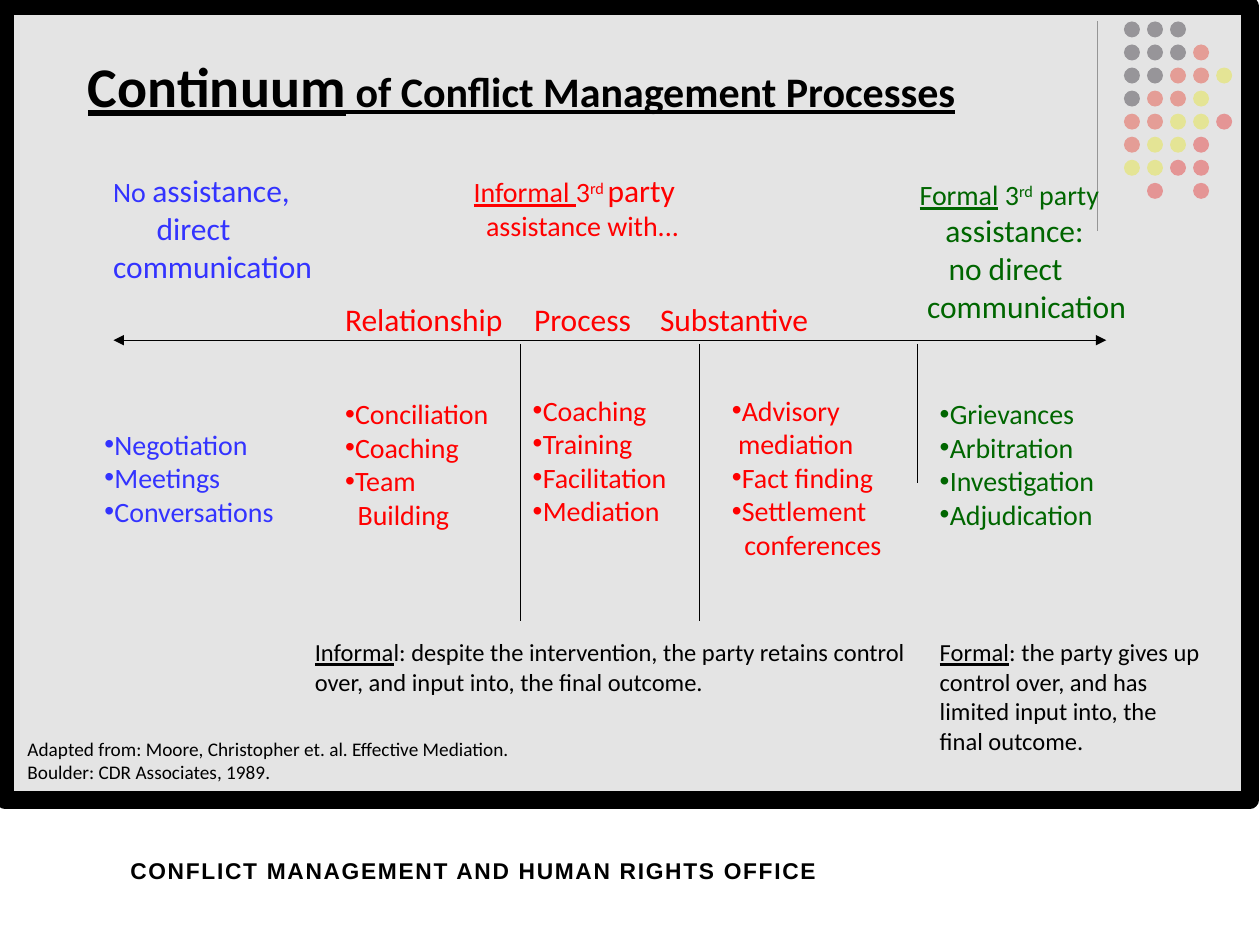
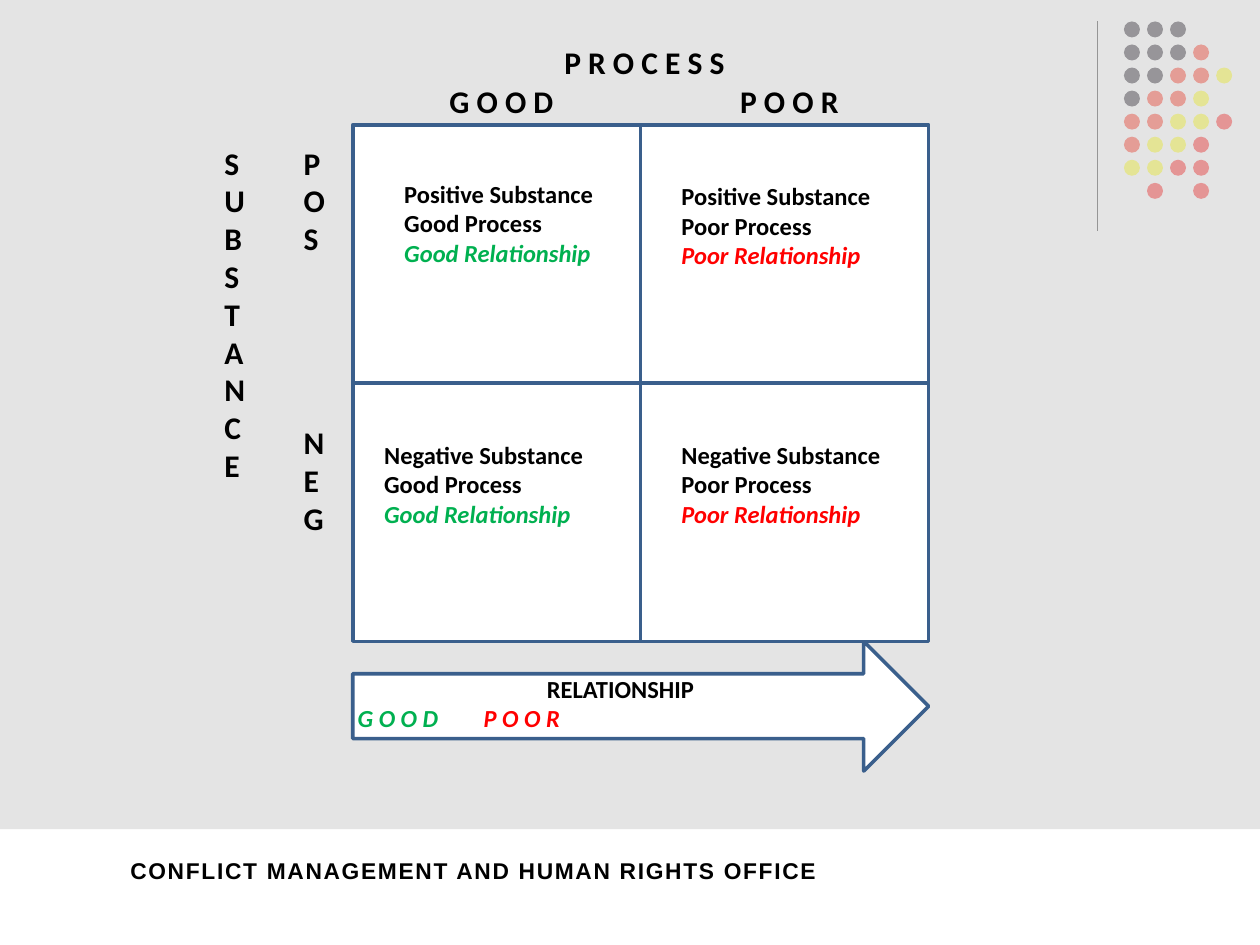
from dataclasses import dataclass

from lxml.etree import SubElement
from pptx import Presentation
from pptx.dml.color import RGBColor
from pptx.enum.shapes import MSO_CONNECTOR, MSO_SHAPE
from pptx.enum.text import PP_ALIGN
from pptx.oxml.ns import qn
from pptx.util import Inches, Pt

CELL = 0.1  # the slide is a grid of 100 columns by 75 rows
BLACK, WHITE, GREY = "000000", "FFFFFF", "D9D9D9"
BLUE, RED, GREEN = "3333FF", "FF0000", "006600"
LEAF, NAVY = "00B050", "3A5F8C"
DOTS = ["KKK", "KKKO", "KKOOY", "KOOY", "OOYYR", "OYYR", "YYRR", " R R"]
INKS = {"K": "06000C", "O": "FE1A02", "Y": "FFFF00", "R": RED}
FOOT = "CONFLICT MANAGEMENT AND HUMAN RIGHTS OFFICE"


def hue(code):
    return RGBColor.from_string(code)


def cells(*counts):
    return [Inches(n * CELL) for n in counts]


def put(par, text, size=16, color=BLACK, font="Calibri", bold=False,
        italic=False, under=False, raised=False, space=0):
    """Add one run of text to a paragraph."""
    run = par.add_run()
    run.text = text
    face = run.font
    face.name, face.size, face.color.rgb = font, Pt(size), hue(color)
    face.bold, face.italic, face.underline = bold, italic, under
    mark = run._r.get_or_add_rPr()
    if raised:
        mark.set("baseline", "30000")
    if space:
        mark.set("spc", str(space * 100))


@dataclass
class Par:
    """A paragraph: a string, or a list of strings and (string, format) pairs."""
    runs: object
    lead: float = 0
    dot: bool = False
    tabs: tuple = ()
    mid: bool = False


class Deck:
    def __init__(self):
        self.show = Presentation()
        self.show.slide_width, self.show.slide_height = cells(100, 75)

    def page(self, panel, edge=None):
        """Start a slide with the dots, the grey panel and the footer."""
        self.slide = self.show.slides.add_slide(self.show.slide_layouts[6])
        self.line(87.1, 1.7, 87.1, 18.3)
        for row, inks in enumerate(DOTS):
            for col, ink in enumerate(inks):
                if ink in INKS:
                    at = (89.2 + col * 1.83, 1.7 + row * 1.83, 1.27, 1.27)
                    self.shape(at, INKS[ink], kind=MSO_SHAPE.OVAL)
        self.shape(panel, GREY, edge, 10, alpha=69)
        self.text((7.5, 67.5, 60.1, 4), [Par(FOOT, mid=True)], size=13,
                  font="Arial", bold=True, space=1)

    def shape(self, at, fill, edge=None, width=2, kind=MSO_SHAPE.RECTANGLE, alpha=None):
        form = self.slide.shapes.add_shape(kind, *cells(*at))
        form.shadow.inherit = False
        form.fill.solid()
        form.fill.fore_color.rgb = hue(fill)
        props = form._element.spPr
        if alpha:
            tint = props.find(qn("a:solidFill"))[0]
            SubElement(tint, qn("a:alpha")).set("val", str(alpha * 1000))
        if edge:
            form.line.color.rgb = hue(edge)
            form.line.width = Pt(width)
            SubElement(props.find(qn("a:ln")), qn("a:round"))
        else:
            form.line.fill.background()

    def line(self, x1, y1, x2, y2, heads=False):
        link = self.slide.shapes.add_connector(MSO_CONNECTOR.STRAIGHT, *cells(x1, y1, x2, y2))
        link.line.color.rgb = hue(BLACK)
        link.line.width = Pt(0.75)
        props = link._element.spPr
        if heads:
            for end in ("a:headEnd", "a:tailEnd"):
                SubElement(props.find(qn("a:ln")), qn(end)).set("type", "triangle")
        SubElement(props, qn("a:effectLst"))

    def text(self, at, pars, stack=False, **style):
        frame = self.slide.shapes.add_textbox(*cells(*at)).text_frame
        frame.word_wrap = True
        if stack:
            frame._txBody.bodyPr.set("vert", "wordArtVert")
            frame.margin_left, frame.margin_top = cells(1.2, 0.8)
        for i, item in enumerate(pars):
            item = item if isinstance(item, Par) else Par(item)
            par = frame.add_paragraph() if i else frame.paragraphs[0]
            self.layout(par, item)
            for run in [item.runs] if isinstance(item.runs, str) else item.runs:
                words, extra = (run, {}) if isinstance(run, str) else run
                put(par, words, **{**style, **extra})

    def layout(self, par, item):
        """Set alignment, indent, bullet and tab stops."""
        par.alignment = PP_ALIGN.CENTER if item.mid else PP_ALIGN.LEFT
        props = par._p.get_or_add_pPr()
        hang = 0.8 if item.dot else 0
        props.set("marL", str(cells(item.lead + hang)[0]))
        props.set("indent", str(cells(-hang)[0]))
        if item.dot:
            SubElement(props, qn("a:buFont")).set("typeface", "Arial")
            SubElement(props, qn("a:buChar")).set("char", "•")
        if item.tabs:
            stops = SubElement(props, qn("a:tabLst"))
            for stop in item.tabs:
                tab = SubElement(stops, qn("a:tab"))
                tab.set("pos", str(cells(stop)[0]))
                tab.set("algn", "l")

    def bullets(self, x, y, width, items, color):
        """List items; a Par among them continues the item above it."""
        pars = [i if isinstance(i, Par) else Par(i, dot=True) for i in items]
        self.text((x, y, width, 2.7 * len(pars) + 1), pars, color=color)


def continuum(deck):
    deck.page((0.4, 0.5, 98.8, 63), BLACK)
    under, high, big = {"under": True}, {"raised": True}, {"size": 18}

    # Title
    deck.text((6, 3.6, 73, 6.4),
              [[("Continuum", {"size": 32}), " of Conflict Management Processes"]],
              size=24, bold=True, under=True)

    # Degrees of assistance, above the arrow
    deck.line(9, 27, 87.8, 27, heads=True)
    deck.text((8, 13.1, 18.5, 10.1),
              [[("No ", {"size": 16}), "assistance,"], Par("direct", lead=3.45),
               "communication"], color=BLUE, size=18)
    deck.text((36.6, 13.1, 19.5, 6.7),
              [[("Informal ", under), "3", ("rd ", high), ("party", big)],
               Par("assistance with...", lead=1)], color=RED)
    deck.text((72, 13.6, 19, 12.8),
              [[("Formal", under), " 3", ("rd", high), " party"],
               Par([("assistance:", big)], lead=2.05),
               Par([("no direct", big)], lead=2.3),
               Par([("communication", big)], lead=0.6)], color=GREEN)
    deck.text((26.4, 23.3, 46, 4),
              [Par("Relationship\tProcess\tSubstantive", tabs=(16.4, 30.5))],
              color=RED, size=18)

    # Methods, below the arrow
    deck.bullets(7.3, 33.4, 16.5, ["Negotiation", "Meetings", "Conversations"], BLUE)
    deck.bullets(26.4, 31, 14.3,
                 ["Conciliation", "Coaching", "Team", Par("Building", lead=1)], RED)
    deck.bullets(41.3, 30.7, 13.6,
                 ["Coaching", "Training", "Facilitation", "Mediation"], RED)
    deck.bullets(57.1, 30.7, 14.6,
                 ["Advisory", Par("mediation", lead=0.5), "Fact finding", "Settlement",
                  Par("conferences", lead=1)], RED)
    deck.bullets(73.6, 31, 15.3,
                 ["Grievances", "Arbitration", "Investigation", "Adjudication"], GREEN)
    for x, foot in ((41.3, 49.3), (55.5, 49.3), (72.8, 38.3)):
        deck.line(x, 27.3, x, foot)

    # Notes and reference
    deck.text((24, 50.1, 49.6, 5.7),
              [[("Informa", under), "l: despite the intervention, the party retains "
                "control over, and input into, the final outcome."]], size=14)
    deck.text((73.6, 50.1, 22.8, 10.4),
              [[("Formal", under), ": the party gives up control over, and has "
                "limited input into, the final outcome."]], size=14)
    deck.text((1.2, 58, 66.4, 6.7),
              ["Adapted from: Moore, Christopher et. al. Effective Mediation.",
               "Boulder: CDR Associates, 1989."], size=11)


def matrix(deck):
    deck.page((0, 0, 100, 65.8))
    left, top, wide, tall = 28, 9.9, 22.85, 20.5

    # Column and row heads
    for x, y, width, words in ((28.3, 2.9, 45.7, "P R O C E S S"),
                               (29.6, 6, 20.4, "G O O D"), (50, 6, 25.3, "P O O R")):
        deck.text((x, y, width, 4), [Par(words, mid=True)], size=18, bold=True)
    for x, y, height, words in ((16.6, 10.6, 37.9, "SUBSTANCE"),
                                (22.9, 10.6, 15.1, "POS"), (22.9, 32.8, 15, "NEG")):
        deck.text((x, y, 5.8, height), [words], stack=True, size=18, bold=True)

    # Relationship arrow
    deck.shape((left, top + 2 * tall, 2 * wide, 10.3), WHITE, NAVY,
               kind=MSO_SHAPE.RIGHT_ARROW)
    good, poor = ({"color": c, "italic": True} for c in (LEAF, RED))
    deck.text((26.4, 53, 45.7, 5.7),
              [Par("RELATIONSHIP", mid=True),
               Par([("G O O D\t", good), ("P O O R", poor)], lead=1, tabs=(36.6,))],
              size=14, bold=True)

    # Quadrants: column, row, place of the words
    for col, row, x, y in ((0, 0, 31.1, 13.7), (0, 1, 29.5, 34.4),
                           (1, 0, 53.1, 13.9), (1, 1, 53.1, 34.4)):
        deck.shape((left + col * wide, top + row * tall, wide, tall), WHITE, NAVY)
        level, tone = (("Good", good), ("Poor", poor))[col]
        sign = ("Positive", "Negative")[row]
        deck.text((x, y, 18.9, 5.7), [f"{sign} Substance", f"{level} Process"],
                  size=14, bold=True)
        deck.text((x, y + 4.7, 18.9, 3.4), [f"{level} Relationship"],
                  size=14, bold=True, **tone)


def main():
    deck = Deck()
    continuum(deck)
    matrix(deck)
    deck.show.save("out.pptx")


if __name__ == "__main__":
    main()
